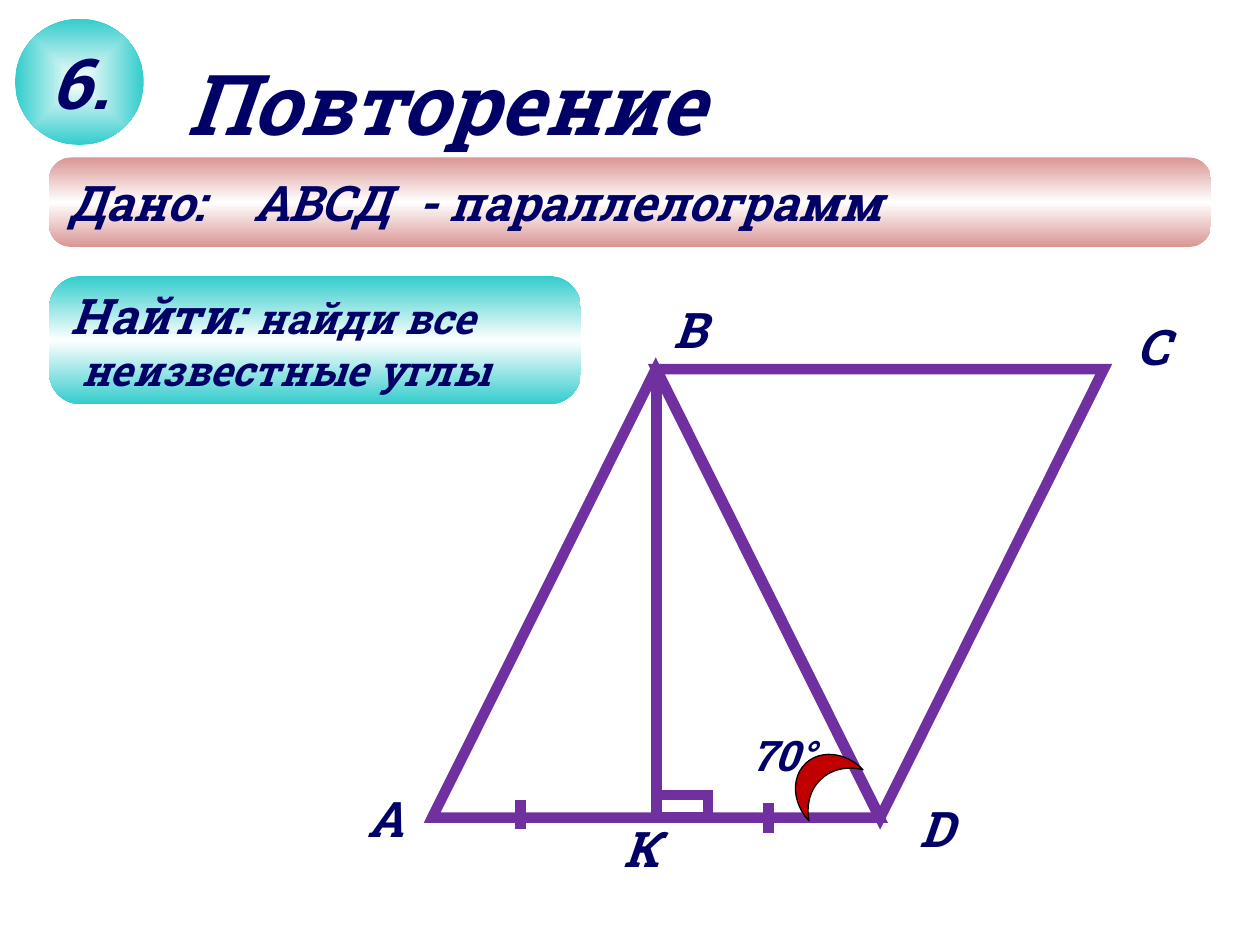
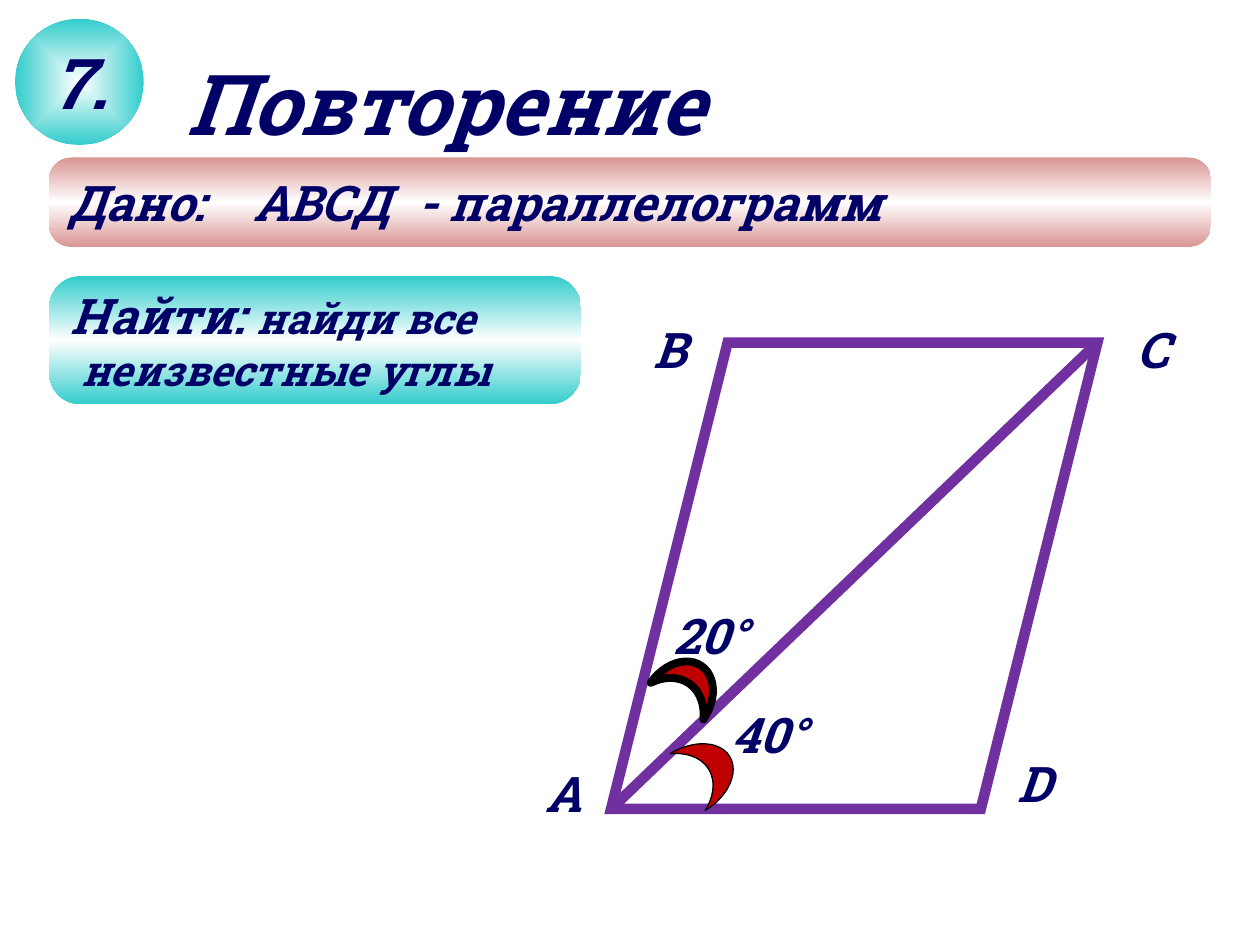
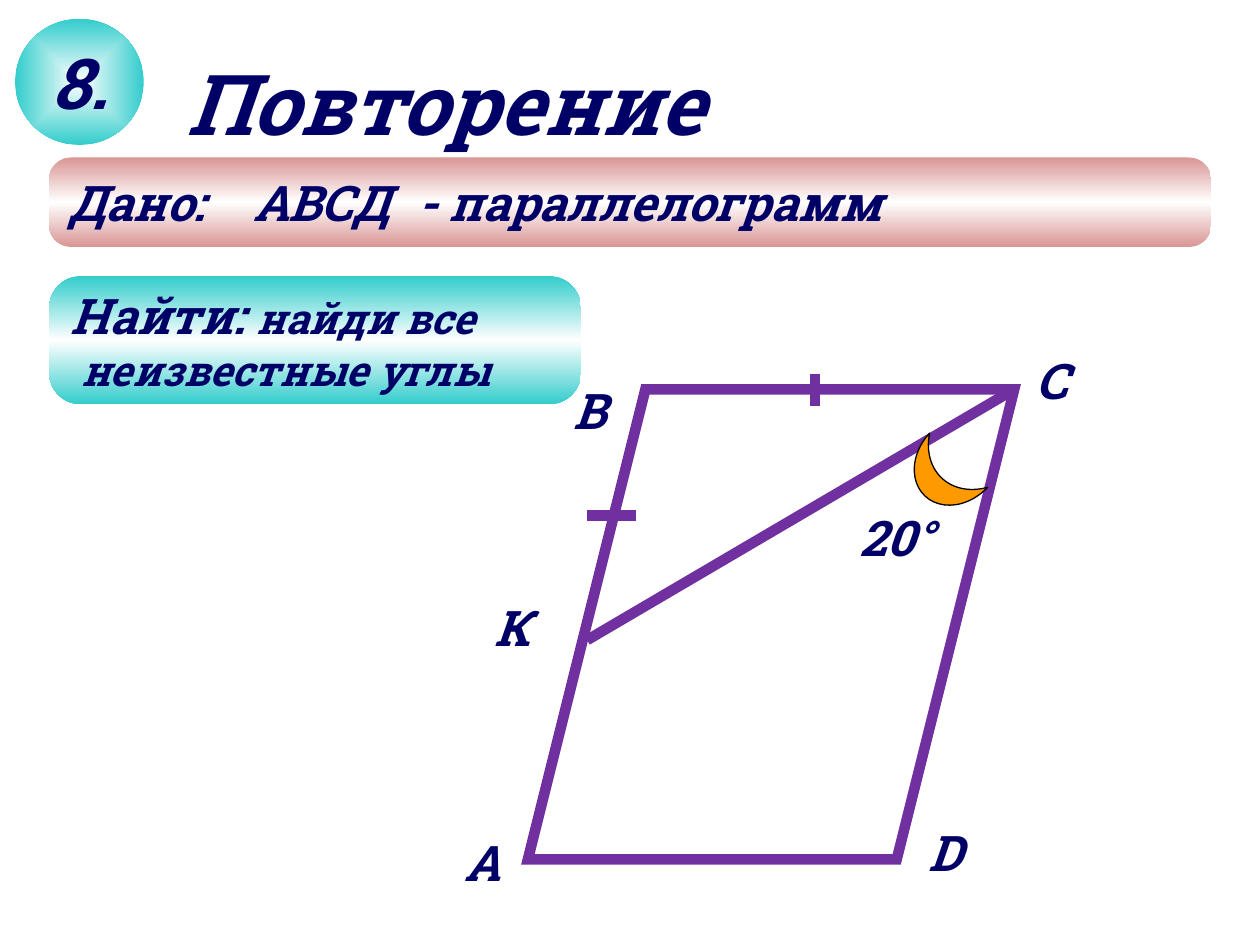
from dataclasses import dataclass

from lxml import etree
from pptx import Presentation, util as u
from pptx.dml.color import RGBColor
from pptx.enum import shapes, text
from pptx.oxml import parse_xml
from pptx.oxml.ns import nsdecls, qn


@dataclass(frozen=True)
class Theme:
    font: str = "Roboto Slab"
    ink: str = "000066"
    figure: str = "7030A0"
    title_edge: str = "5E457C"
    rose: str = "D99694"
    teal: str = "33CCCC"
    white: str = "FFFFFF"
    black: str = "000000"
    red: str = "C00000"
    orange: str = "FF9900"
    title: int = 48
    number: int = 40
    body: int = 28
    small: int = 24
    stroke: float = 6
    thin: float = 0.75
    thick: float = 4.5


T = Theme()
MSO = shapes.MSO_SHAPE
LINEAR = '<a:lin ang="5400000" scaled="1"/>'
RADIAL = '<a:path path="shape"><a:fillToRect l="50000" t="50000" r="50000" b="50000"/></a:path>'


def write(sp, *paragraphs):
    """Fill a shape with paragraphs, each a list of (text, size) runs."""
    tf = sp.text_frame
    tf.word_wrap = True
    for i, runs in enumerate(paragraphs):
        p = tf.add_paragraph() if i else tf.paragraphs[0]
        p.alignment = text.PP_ALIGN.LEFT
        for content, size in runs:
            r = p.add_run()
            r.text = content
            look = {"name": T.font, "size": u.Pt(size), "bold": True, "italic": True}
            for key, value in look.items():
                setattr(r.font, key, value)
            r.font.color.rgb = RGBColor.from_string(T.ink)
    return tf


def gradient(sp, colours, shade):
    """Give a shape an even gradient without outline or shadow."""
    sp.shadow.inherit = False
    sp.line.fill.background()
    step = 100000 // (len(colours) - 1)
    stops = "".join(f'<a:gs pos="{i * step}"><a:srgbClr val="{c}"/></a:gs>'
                    for i, c in enumerate(colours))
    sp._element.spPr.find(qn("a:prstGeom")).addnext(parse_xml(
        f'<a:gradFill {nsdecls("a")} rotWithShape="1"><a:gsLst>{stops}</a:gsLst>{shade}</a:gradFill>'))


# outlines: preset, left, top, width, height, rotation; lines: x1, y1, x2, y2
# labels: text, left, top, width, size; moons: left, top, width, height, rotation, fill, line width
problems = [
    {"number": "6.",
     "outlines": [(MSO.ISOSCELES_TRIANGLE, 3.43, 2.93, 3.55, 3.56, 0),
                  (MSO.ISOSCELES_TRIANGLE, 5.21, 2.93, 3.55, 3.56, 180),
                  (MSO.RECTANGLE, 5.21, 6.31, 0.41, 0.18, 0)],
     "lines": [(5.21, 2.99, 5.21, 6.49), (4.13, 6.35, 4.13, 6.58), (6.1, 6.37, 6.1, 6.61)],
     "labels": [("70°", 5.87, 5.74, 1.1, T.small), ("D", 7.2, 6.29, 0.5, T.body),
                ("С", 8.92, 2.46, 0.5, T.body), ("В", 5.25, 2.33, 0.5, T.body),
                ("А", 2.82, 6.21, 0.5, T.body), ("К", 4.85, 6.45, 0.7, T.body)],
     "moons": [(6.34, 5.89, 0.35, 0.59, 46.6, T.red, T.thin)]},
    {"number": "7.",
     "outlines": [(MSO.PARALLELOGRAM, 4.85, 2.72, 3.86, 3.7, 0)],
     "lines": [(4.85, 6.42, 8.71, 2.72)],
     "labels": [("40°", 5.71, 5.54, 1.4, T.body), ("20°", 5.25, 4.76, 1.33, T.body),
                ("D", 7.98, 5.93, 0.5, T.body), ("С", 8.92, 2.49, 0.5, T.body),
                ("В", 5.09, 2.49, 0.5, T.body), ("А", 4.23, 6.01, 0.5, T.body)],
     "moons": [(5.43, 5.84, 0.39, 0.53, 148.6, T.red, T.thin),
               (5.3, 5.17, 0.34, 0.51, 124.7, T.red, T.thick)]},
    {"number": "8.",
     "outlines": [(MSO.PARALLELOGRAM, 4.19, 3.09, 3.86, 3.73, 0)],
     "lines": [(8.05, 3.09, 4.66, 5.08), (4.66, 4.09, 5.05, 4.09), (6.47, 2.97, 6.47, 3.22)],
     "labels": [("20°", 6.72, 3.98, 1.03, T.body), ("D", 7.27, 6.48, 0.5, T.body),
                ("С", 8.12, 2.73, 0.5, T.body), ("В", 4.45, 2.97, 0.5, T.body),
                ("А", 3.59, 6.56, 0.5, T.body), ("К", 3.83, 4.69, 0.7, T.body)],
     "moons": [(7.28, 3.48, 0.39, 0.63, 313.1, T.orange, T.thin)]},
]

prs = Presentation()
prs.slide_width, prs.slide_height = u.Inches(10), u.Inches(7.5)

for problem in problems:
    s = prs.slides.add_slide(prs.slide_layouts[6])

    # Geometric figure
    figure = s.shapes.add_group_shape()
    strokes = []
    for preset, *box, rotation in problem["outlines"]:
        sp = figure.shapes.add_shape(preset, *map(u.Inches, box))
        sp.rotation = rotation
        sp.fill.background()
        sp.shadow.inherit = False
        strokes.append(sp)
    for ends in problem["lines"]:
        line = figure.shapes.add_connector(shapes.MSO_CONNECTOR.STRAIGHT, *map(u.Inches, ends))
        strokes.append(line)
    for sp in strokes:
        sp.line.width = u.Pt(T.stroke)
        sp.line.color.rgb = RGBColor.from_string(T.figure)
        etree.SubElement(sp.line._get_or_add_ln(), qn("a:miter"), lim="800000")
        if sp in strokes[len(problem["outlines"]):]:
            etree.SubElement(sp._element.spPr, qn("a:effectLst"))

    # Vertex names and angles
    for content, left, top, width, size in problem["labels"]:
        height = 0.57 if size == T.body else 0.51
        sp = s.shapes.add_textbox(*map(u.Inches, (left, top, width, height)))
        write(sp, [(content, size)]).auto_size = text.MSO_AUTO_SIZE.SHAPE_TO_FIT_TEXT
    for *box, rotation, fill, width in problem["moons"]:
        sp = s.shapes.add_shape(MSO.MOON, *map(u.Inches, box))
        sp.rotation = rotation
        sp.shadow.inherit = False
        sp.fill.solid()
        sp.fill.fore_color.rgb = RGBColor.from_string(fill)
        sp.line.width = u.Pt(width)
        sp.line.color.rgb = RGBColor.from_string(T.black)

    # Given and wanted bands
    bands = []
    for top, width, height, colour in ((1.25, 9.22, 0.71, T.rose), (2.19, 4.22, 1.02, T.teal)):
        sp = s.shapes.add_shape(MSO.ROUNDED_RECTANGLE,
                                *map(u.Inches, (0.39, top, width, height)))
        sp.adjustments[0] = 0.25
        gradient(sp, (colour, T.white, colour), LINEAR)
        bands.append(sp)
    given, wanted = bands
    tf = write(given, [("Дано:\tАВСД\t- параллелограмм", T.body)])
    tabs = etree.SubElement(tf.paragraphs[0]._p.get_or_add_pPr(), qn("a:tabLst"))
    for stop in (1.47, 2.77):
        etree.SubElement(tabs, qn("a:tab"), pos=str(u.Inches(stop)), algn="l")
    tf = write(wanted, [("Найти: ", T.body), ("найди все", T.small)],
               [("неизвестные углы", T.small)])
    tf.paragraphs[1]._p.get_or_add_pPr().set("marL", str(u.Inches(0.08)))

    # Problem number
    badge = s.shapes.add_shape(MSO.OVAL, *map(u.Inches, (0.12, 0.15, 1.02, 1)))
    gradient(badge, (T.white, T.teal), RADIAL)
    tf = write(badge, [(problem["number"], T.number)])
    tf.word_wrap = False
    tf.paragraphs[0].alignment = text.PP_ALIGN.CENTER

    # Title
    title = s.shapes.add_textbox(*map(u.Inches, (1.38, 0.36, 4.72, 0.91)))
    tf = write(title, [("Повторение", T.title)])
    tf.auto_size = text.MSO_AUTO_SIZE.SHAPE_TO_FIT_TEXT
    tf.paragraphs[0].runs[0]._r.get_or_add_rPr().insert(0, parse_xml(
        f'<a:ln {nsdecls("a")} w="{u.Pt(0.71)}"><a:solidFill>'
        f'<a:srgbClr val="{T.title_edge}"/></a:solidFill></a:ln>'))

prs.save("out.pptx")
